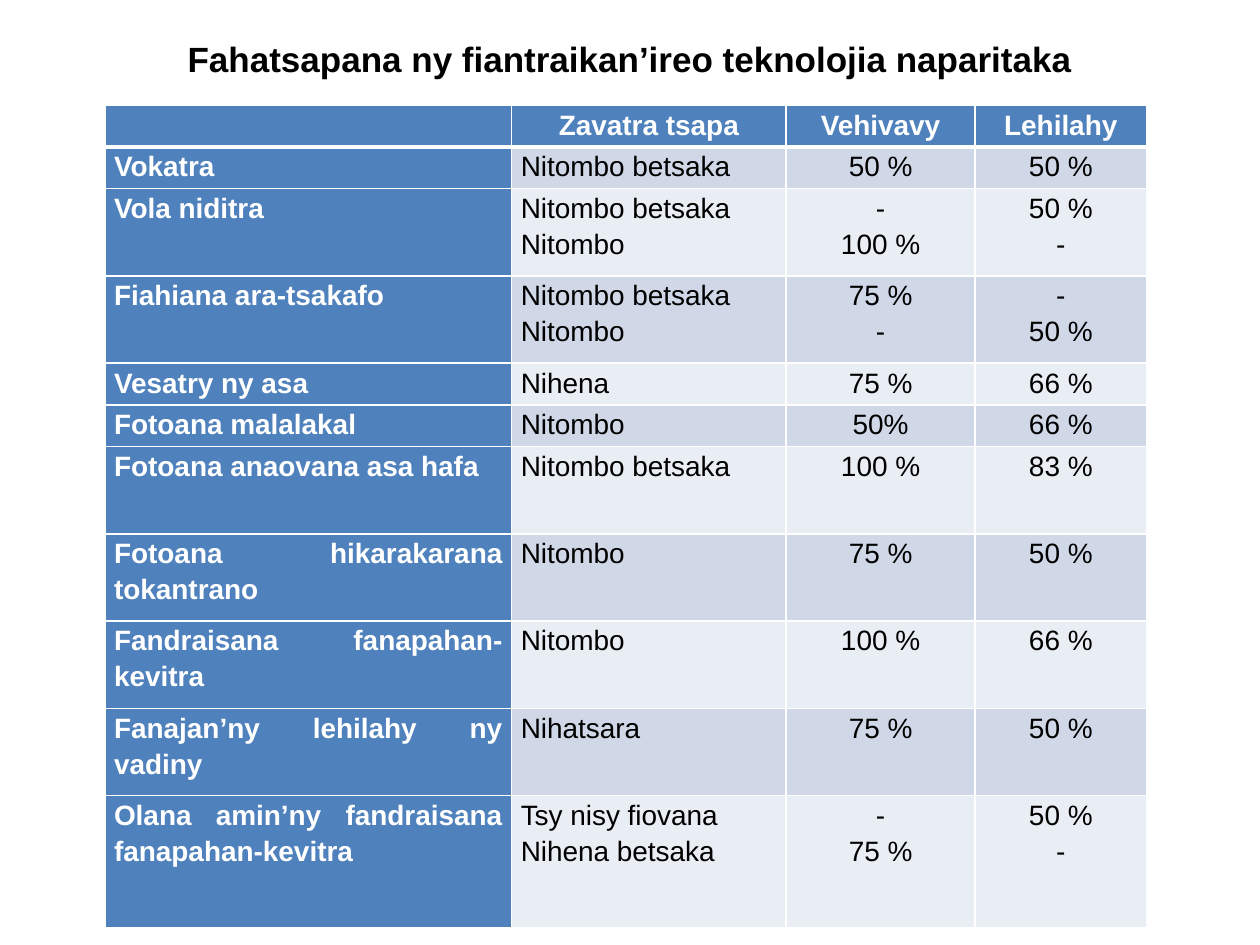
from lxml import etree
from pptx import Presentation
from pptx.dml.color import RGBColor
from pptx.enum.text import MSO_ANCHOR, PP_ALIGN
from pptx.oxml.ns import qn
from pptx.util import Pt

CENTER, JUSTIFY = PP_ALIGN.CENTER, PP_ALIGN.JUSTIFY
TOP = MSO_ANCHOR.TOP

TITLE = "Fahatsapana ny fiantraikan’ireo teknolojia naparitaka"
SHORT, TALL, LAST = 23.8, 49.9, 75.6
# Row height, then the text of each cell
ROWS = [
    (SHORT, "", "Zavatra tsapa", "Vehivavy", "Lehilahy"),
    (SHORT, "Vokatra", "Nitombo betsaka", "50 %", "50 %"),
    (TALL, "Vola niditra", "Nitombo betsaka\nNitombo", "-\n100 %", "50 %\n-"),
    (TALL, "Fiahiana ara-tsakafo", "Nitombo betsaka\nNitombo", "75 %\n-", "-\n50 %"),
    (SHORT, "Vesatry ny asa", "Nihena", "75 %", "66 %"),
    (SHORT, "Fotoana malalakal", "Nitombo", "50%", "66 %"),
    (TALL, "Fotoana anaovana asa hafa", "Nitombo betsaka", "100 %", "83 %"),
    (TALL, "Fotoana hikarakarana tokantrano", "Nitombo", "75 %", "50 %"),
    (TALL, "Fandraisana fanapahan-kevitra", "Nitombo", "100 %", "66 %"),
    (TALL, "Fanajan’ny lehilahy ny vadiny", "Nihatsara", "75 %", "50 %"),
    (LAST, "Olana amin’ny fandraisana fanapahan-kevitra",
     "Tsy nisy fiovana\nNihena betsaka", "-\n75 %", "50 %\n-"),
]
COLUMN_WIDTHS = [232.4, 156.8, 108, 98]
TABLE_LEFT, TABLE_TOP = 60, 60.2
BLUE, WHITE, BLACK = "4F81BD", "FFFFFF", "000000"
BANDS = ["E9EDF4", "D0D8E8"]


def color(value):
    return RGBColor.from_string(value)


def format_paragraph(para, size, ink, bold, align):
    para.alignment = align
    for span in para.runs:
        span.font.name = "Arial"
        span.font.size = Pt(size)
        span.font.bold = bold
        span.font.color.rgb = color(ink)


def set_borders(cell, top, bottom):
    """Draw white borders; they must precede the fill in the cell properties."""
    properties = cell._tc.get_or_add_tcPr()
    widths = [("a:lnL", 1), ("a:lnR", 1), ("a:lnT", top), ("a:lnB", bottom)]
    for position, (tag, width) in enumerate(widths):
        line = etree.Element(qn(tag), w=str(Pt(width)))
        fill = etree.SubElement(line, qn("a:solidFill"))
        etree.SubElement(fill, qn("a:srgbClr"), val=WHITE)
        properties.insert(position, line)


def add_title(page):
    box = page.shapes.add_textbox(Pt(36), Pt(21.2), Pt(648), Pt(24))
    frame = box.text_frame
    frame.word_wrap = True
    frame.vertical_anchor = TOP
    frame.margin_top = frame.margin_bottom = 0
    frame.text = TITLE
    format_paragraph(frame.paragraphs[0], 20, BLACK, True, CENTER)


def fill_cell(cell, text, row, column):
    label = row == 0 or column == 0
    cell.fill.solid()
    cell.fill.fore_color.rgb = color(BLUE if label else BANDS[row % 2])
    set_borders(cell, 3 if row == 1 else 1, 3 if row == 0 else 1)
    cell.margin_left = cell.margin_right = Pt(5.2)
    cell.margin_top = cell.margin_bottom = 0
    cell.vertical_anchor = TOP
    cell.text_frame.text = text
    align = CENTER if row == 0 or column > 1 else JUSTIFY
    for para in cell.text_frame.paragraphs:
        para.line_spacing = 1.15
        format_paragraph(para, 16, WHITE if label else BLACK, label, align)


def add_effects_table(page):
    height = sum(row[0] for row in ROWS)
    table = page.shapes.add_table(
        len(ROWS), len(COLUMN_WIDTHS), Pt(TABLE_LEFT), Pt(TABLE_TOP),
        Pt(sum(COLUMN_WIDTHS)), Pt(height)).table
    table.first_col = True
    for column, width in zip(table.columns, COLUMN_WIDTHS):
        column.width = Pt(width)
    for r, (row_height, *texts) in enumerate(ROWS):
        table.rows[r].height = Pt(row_height)
        for c, text in enumerate(texts):
            fill_cell(table.cell(r, c), text, r, c)


def main():
    deck = Presentation()
    deck.slide_width, deck.slide_height = Pt(720), Pt(540)
    page = deck.slides.add_slide(deck.slide_layouts[6])
    add_title(page)
    add_effects_table(page)
    deck.save("out.pptx")


if __name__ == "__main__":
    main()
